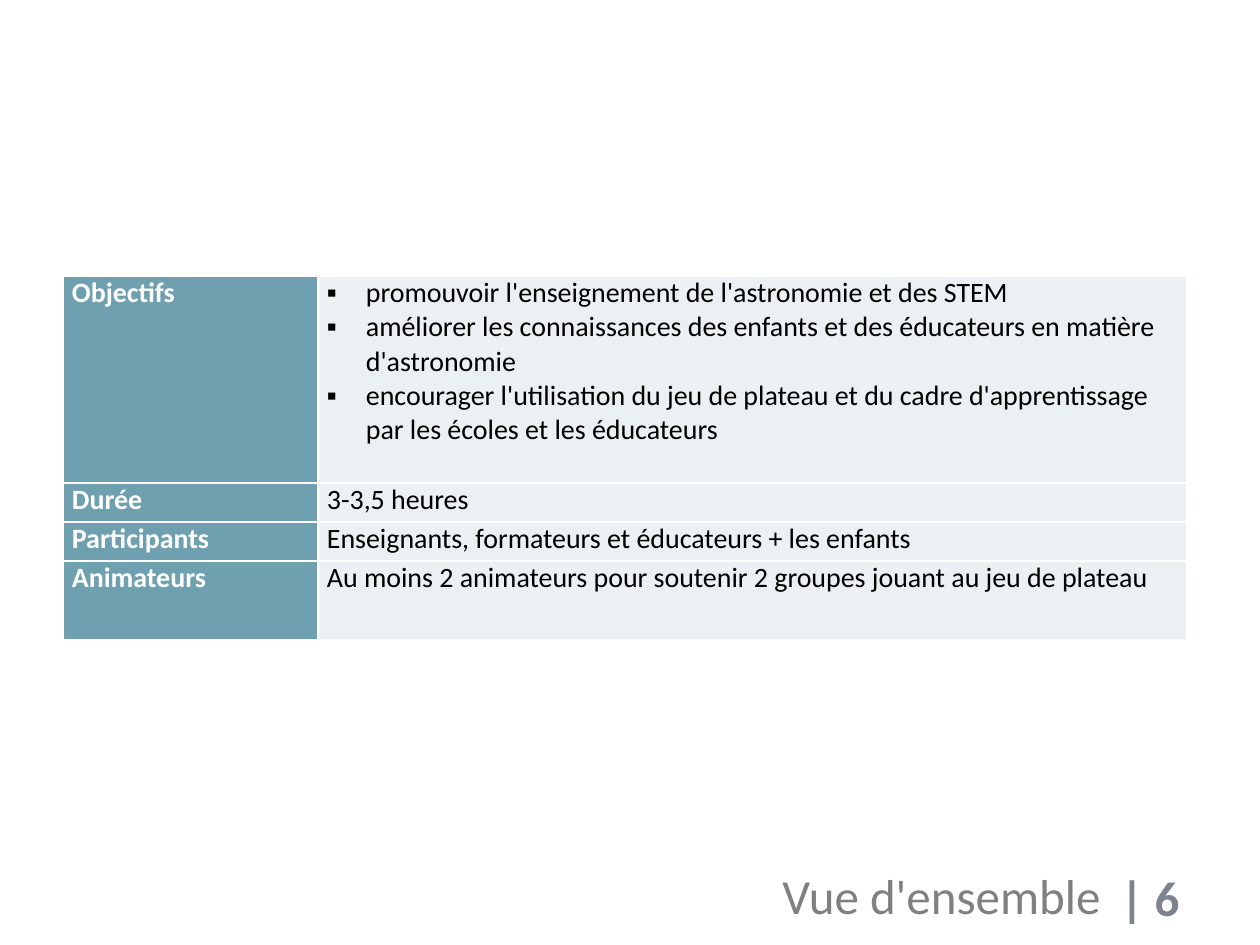
from lxml import etree
from pptx import Presentation
from pptx.dml.color import RGBColor
from pptx.enum.text import MSO_ANCHOR, PP_ALIGN
from pptx.oxml.ns import qn
from pptx.util import Emu, Pt

TOP = MSO_ANCHOR.TOP
LEFT, RIGHT = PP_ALIGN.LEFT, PP_ALIGN.RIGHT
SCALE = 914400 / 126
FONT = "Calibri"
COLORS = {
    "head": "6EA0B0", "body": "EBF0F2", "edge": "FFFFFF",
    "light": "FFFFFF", "dark": "000000",
    "title": "808080", "page": "7E848D",
}
COLS = [255, 869]
HEIGHTS = [207, 39, 39, 79]
ROWS = [
    ("Objectifs", [
        "promouvoir l'enseignement de l'astronomie et des STEM",
        "améliorer les connaissances des enfants et des éducateurs en matière d'astronomie",
        "encourager l'utilisation du jeu de plateau et du cadre d'apprentissage "
        "par les écoles et les éducateurs",
    ]),
    ("Durée", ["3-3,5 heures"]),
    ("Participants", ["Enseignants, formateurs et éducateurs + les enfants"]),
    ("Animateurs", ["Au moins 2 animateurs pour soutenir 2 groupes jouant au jeu de plateau"]),
]


def px(n):
    return Emu(round(n * SCALE))


def rgb(name):
    return RGBColor.from_string(COLORS[name])


def add_run(para, text, size, color, bold=False):
    run = para.add_run()
    run.text = text
    font = run.font
    font.name, font.size, font.bold = FONT, Pt(size), bold
    font.color.rgb = rgb(color)


def add_bullet(para):
    props = para._p.get_or_add_pPr()
    props.set("marL", str(px(39)))
    props.set("indent", str(-px(39)))
    etree.SubElement(props, qn("a:buFont"), typeface=FONT)
    etree.SubElement(props, qn("a:buChar"), char="▪")


def set_edges(cell):
    """Draw a thin line on all four sides; lines must precede the fill."""
    props = cell._tc.get_or_add_tcPr()
    for i, side in enumerate(("lnL", "lnR", "lnT", "lnB")):
        line = etree.Element(qn("a:" + side), w=str(Pt(1)))
        fill = etree.SubElement(line, qn("a:solidFill"))
        etree.SubElement(fill, qn("a:srgbClr"), val=COLORS["edge"])
        props.insert(i, line)


def fill_cell(cell, lines, fill, color, bold):
    cell.fill.solid()
    cell.fill.fore_color.rgb = rgb(fill)
    set_edges(cell)
    cell.vertical_anchor = TOP
    cell.margin_left = cell.margin_right = px(9)
    cell.margin_top = cell.margin_bottom = 0
    frame = cell.text_frame
    for i, text in enumerate(lines):
        para = frame.add_paragraph() if i else frame.paragraphs[0]
        if len(lines) > 1:
            add_bullet(para)
        else:
            para.space_before = para.space_after = Pt(6)
        add_run(para, text, 16, color, bold)


def add_facts(slide, x, y):
    shape = slide.shapes.add_table(
        len(ROWS), len(COLS), px(x), px(y), px(sum(COLS)), px(sum(HEIGHTS)))
    table = shape.table
    table.first_row = table.horz_banding = False
    for col, width in zip(table.columns, COLS):
        col.width = px(width)
    for row, height, (label, lines) in zip(table.rows, HEIGHTS, ROWS):
        row.height = px(height)
        fill_cell(row.cells[0], [label], "head", "light", True)
        fill_cell(row.cells[1], lines, "body", "dark", False)


def set_line(shape, box, text, color, align, bold=False):
    """Put one line of footer text in a shape placed at box."""
    shape.left, shape.top, shape.width, shape.height = map(px, box)
    frame = shape.text_frame
    frame.word_wrap = True
    frame.vertical_anchor = TOP
    para = frame.paragraphs[0]
    para.alignment = align
    add_run(para, text, 28, color, bold)


def add_footer(slide, x, y):
    set_line(slide.shapes.title, (x, y, 1071, 72), "Vue d'ensemble", "title", RIGHT)
    page = slide.shapes.add_textbox(0, 0, 0, 0)
    set_line(page, (x + 1066, y + 2, 142, 72), "| 6", "page", LEFT, True)


def main():
    deck = Presentation()
    deck.slide_width, deck.slide_height = px(1260), px(945)
    slide = deck.slides.add_slide(deck.slide_layouts[5])
    add_footer(slide, 42, 859)
    add_facts(slide, 63, 276)
    deck.save("out.pptx")


if __name__ == "__main__":
    main()
